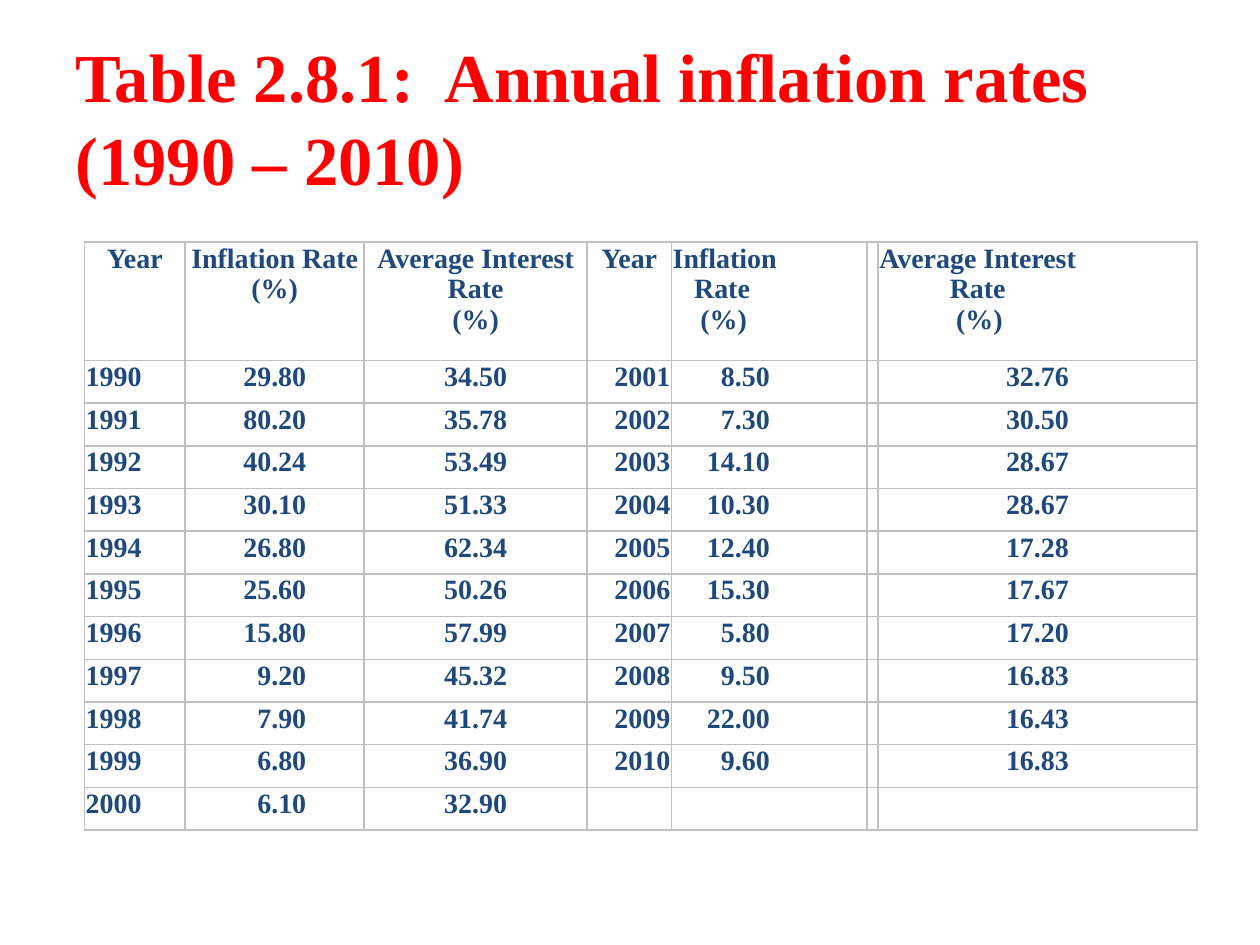
from lxml import etree
from pptx import Presentation
from pptx.dml.color import RGBColor
from pptx.enum.text import MSO_ANCHOR, PP_ALIGN
from pptx.oxml.ns import qn
from pptx.util import Inches, Pt

RED = RGBColor(0xFF, 0x00, 0x00)
NAVY = RGBColor(0x1F, 0x49, 0x7D)
SILVER = RGBColor(0xC0, 0xC0, 0xC0)
LEFT, CENTER, RIGHT = PP_ALIGN.LEFT, PP_ALIGN.CENTER, PP_ALIGN.RIGHT


def write(frame, content, size=16, color=NAVY, align=LEFT, spacing=17.7, indents=()):
    """Fill a text frame, one paragraph per line; indents are inches per line."""
    for i, line in enumerate(content.split("\n")):
        paragraph = frame.paragraphs[0] if i == 0 else frame.add_paragraph()
        paragraph.alignment = align
        paragraph.line_spacing = Pt(spacing)
        if indents:
            paragraph._p.get_or_add_pPr().set("marL", str(Inches(indents[i])))
        run = paragraph.add_run()
        run.text = line
        run.font.name = "Times New Roman"
        run.font.size = Pt(size)
        run.font.bold = True
        run.font.color.rgb = color


def outline(cell):
    properties = cell._tc.get_or_add_tcPr()
    for position, side in enumerate(("a:lnL", "a:lnR", "a:lnT", "a:lnB")):
        border = etree.Element(qn(side), w=str(Pt(1)))
        fill = etree.SubElement(border, qn("a:solidFill"))
        etree.SubElement(fill, qn("a:srgbClr"), val=str(SILVER))
        properties.insert(position, border)


prs = Presentation()
prs.slide_width, prs.slide_height = Inches(10), Inches(7.5)
slide = prs.slides.add_slide(prs.slide_layouts[6])

title = slide.shapes.add_textbox(Inches(0.5), Inches(0.3), Inches(9), Inches(1.25)).text_frame
title.word_wrap = True
title.vertical_anchor = MSO_ANCHOR.MIDDLE
write(title, "Table 2.8.1:  Annual inflation rates (1990 – 2010)", size=39.2, color=RED, spacing=47.4)

headers = [
    ("Year", CENTER, ()),
    ("Inflation Rate\n(%)", CENTER, ()),
    ("Average Interest Rate\n(%)", CENTER, ()),
    ("Year", CENTER, ()),
    ("Inflation\nRate\n(%)", LEFT, (0, 0.17, 0.22)),
    ("", LEFT, ()),
    ("Average Interest\nRate\n(%)", LEFT, (0, 0.56, 0.61)),
]
# Alignment and right margin of the values in each column
value_formats = [(LEFT, 0.01), (RIGHT, 0.46), (CENTER, 0.01), (RIGHT, 0.01),
                 (RIGHT, 0.77), (LEFT, 0.01), (CENTER, 0.01)]
rates = [
    ("1990", "29.80", "34.50", "2001", "8.50", "", "32.76"),
    ("1991", "80.20", "35.78", "2002", "7.30", "", "30.50"),
    ("1992", "40.24", "53.49", "2003", "14.10", "", "28.67"),
    ("1993", "30.10", "51.33", "2004", "10.30", "", "28.67"),
    ("1994", "26.80", "62.34", "2005", "12.40", "", "17.28"),
    ("1995", "25.60", "50.26", "2006", "15.30", "", "17.67"),
    ("1996", "15.80", "57.99", "2007", "5.80", "", "17.20"),
    ("1997", "9.20", "45.32", "2008", "9.50", "", "16.83"),
    ("1998", "7.90", "41.74", "2009", "22.00", "", "16.43"),
    ("1999", "6.80", "36.90", "2010", "9.60", "", "16.83"),
    ("2000", "6.10", "32.90", "", "", "", ""),
]
column_widths = [0.8, 1.42, 1.77, 0.67, 1.55, 0.09, 2.53]
table_height, header_height = 4.67, 0.94

table = slide.shapes.add_table(len(rates) + 1, len(headers), Inches(0.67), Inches(1.92),
                               Inches(sum(column_widths)), Inches(table_height)).table
table.first_row = table.horz_banding = False
for column, width in zip(table.columns, column_widths):
    column.width = Inches(width)
for row in table.rows:
    row.height = Inches((table_height - header_height) / len(rates))
table.rows[0].height = Inches(header_height)

for cell in table.iter_cells():
    cell.margin_left = cell.margin_right = cell.margin_top = cell.margin_bottom = Inches(0.01)
    cell.fill.background()
    outline(cell)

for c, (heading, align, indents) in enumerate(headers):
    write(table.cell(0, c).text_frame, heading, align=align, indents=indents)
for r, values in enumerate(rates, start=1):
    for c, (value, (align, margin)) in enumerate(zip(values, value_formats)):
        cell = table.cell(r, c)
        cell.margin_right = Inches(margin)
        write(cell.text_frame, value, align=align)

prs.save("out.pptx")
